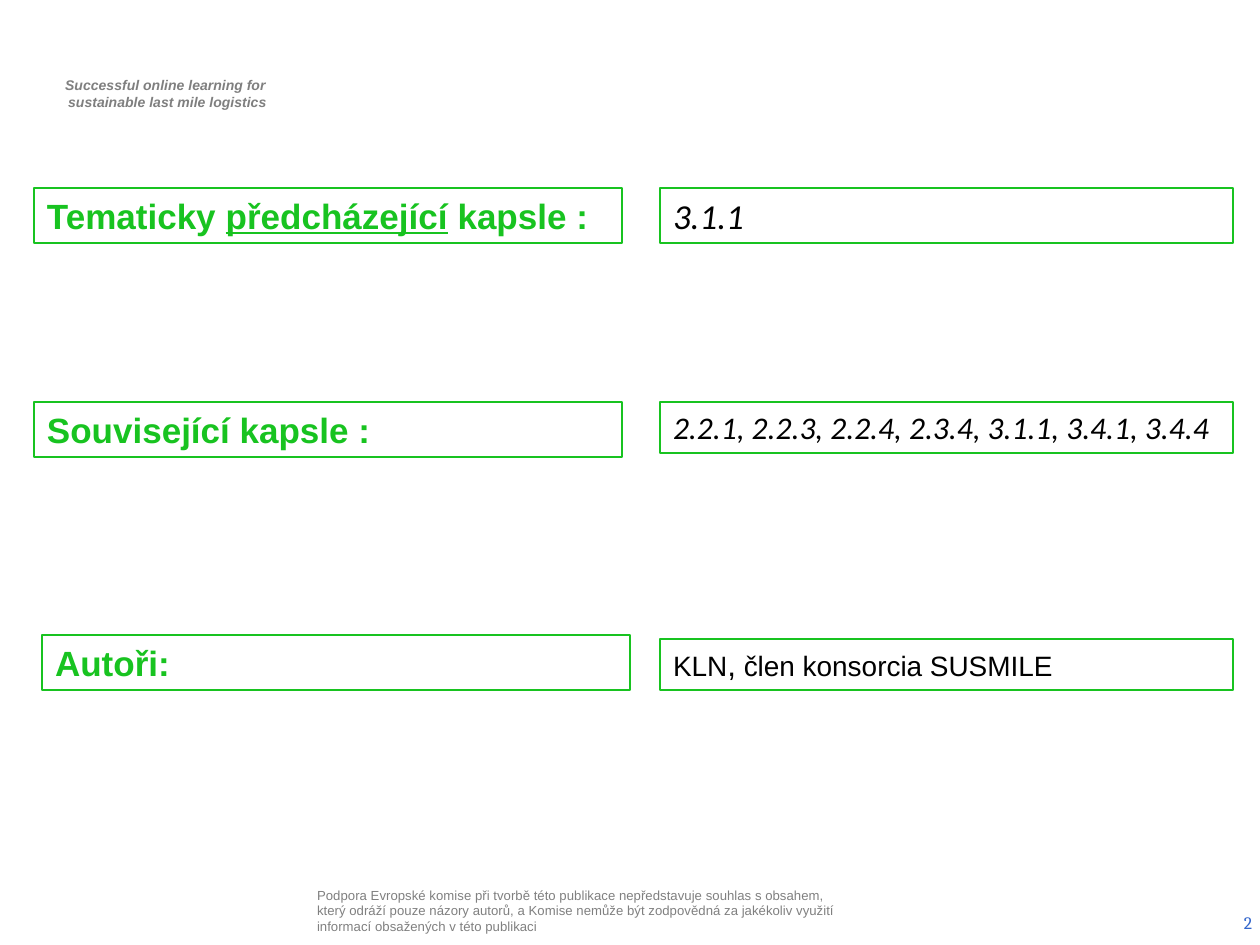
from pptx import Presentation
from pptx.dml.color import RGBColor
from pptx.enum.shapes import MSO_SHAPE
from pptx.enum.text import MSO_ANCHOR, PP_ALIGN
from pptx.util import Emu, Pt

GREEN, GREY = "18C320", "7F7F7F"
INSETS = (13, 6, 13, 6)
LABEL = dict(size=20, color=GREEN, bold=True)
CODES = dict(font="Calibri", italic=True)


def px(n):
    """Turn px into EMU."""
    return Emu(round(n * 914400 / 126))


def rgb(value):
    """Turn a hex string into a colour."""
    return RGBColor.from_string(value)


def add_run(p, text, size, color="000000", font="Arial", bold=False, italic=False, underline=False):
    """Add one formatted run to a paragraph."""
    r = p.add_run()
    r.text = text
    r.font.size, r.font.name = Pt(size), font
    r.font.bold, r.font.italic, r.font.underline = bold, italic, underline
    r.font.color.rgb = rgb(color)


def set_frame(sp, insets=INSETS, anchor=MSO_ANCHOR.TOP):
    """Prepare the text frame of a shape and return it."""
    tf = sp.text_frame
    tf.word_wrap = True
    tf.vertical_anchor = anchor
    tf.margin_left, tf.margin_top, tf.margin_right, tf.margin_bottom = map(px, insets)
    return tf


def add_header(s, x, y, w, h):
    """Place the two centred lines of the project motto."""
    tf = set_frame(s.shapes.add_textbox(px(x), px(y), px(w), px(h)))
    lines = ("Successful online learning for ", "sustainable last mile logistics")
    for i, line in enumerate(lines):
        p = tf.add_paragraph() if i else tf.paragraphs[0]
        p.alignment = PP_ALIGN.CENTER
        p._p.get_or_add_pPr().set("marL", str(px(5)))
        add_run(p, line, 8, GREY, bold=True, italic=True)


def add_disclaimer(s, x, y, w, h):
    """Place the funding disclaimer."""
    tf = set_frame(s.shapes.add_textbox(px(x), px(y), px(w), px(h)), (5, 1, 5, 5))
    add_run(tf.paragraphs[0],
            "Podpora Evropské komise při tvorbě této publikace nepředstavuje souhlas s obsahem, "
            "který odráží pouze názory autorů, a Komise nemůže být zodpovědná za jakékoliv využití "
            "informací obsažených v této publikaci", 7.5, "808080")


def add_page_number(s, x, y, w, h):
    """Place the page number at the right edge."""
    tf = set_frame(s.shapes.add_textbox(px(x), px(y), px(w), px(h)), anchor=MSO_ANCHOR.MIDDLE)
    p = tf.paragraphs[0]
    p.alignment = PP_ALIGN.RIGHT
    add_run(p, "2", 10, "3366CC", font="Cambria")


def add_field(s, x, y, w, h, runs):
    """Place one green-framed field with its runs."""
    sp = s.shapes.add_shape(MSO_SHAPE.RECTANGLE, px(x), px(y), px(w), px(h))
    sp.shadow.inherit = False
    sp.fill.solid()
    sp.fill.fore_color.rgb = rgb("FFFFFF")
    sp.line.color.rgb = rgb(GREEN)
    sp.line.width = Pt(0.75)
    p = set_frame(sp).paragraphs[0]
    p.alignment = PP_ALIGN.LEFT
    for text, style in runs:
        add_run(p, text, **style)


def main():
    """Build the slide and save it."""
    prs = Presentation()
    prs.slide_width, prs.slide_height = px(1260), px(945)
    s = prs.slides.add_slide(prs.slide_layouts[6])
    add_header(s, 37, 71, 256, 47)
    add_disclaimer(s, 312, 886, 538, 63)
    add_page_number(s, 971, 898, 294, 50)

    preceding = [("Tematicky ", LABEL), ("předcházející", dict(LABEL, underline=True)),
                 (" kapsle :", LABEL)]
    related = "2.2.1, 2.2.3, 2.2.4, 2.3.4, 3.1.1, 3.4.1, 3.4.4"
    authors = [("KLN", dict(size=16)), (",", dict(size=18)),
               (" člen konsorcia SUSMILE", dict(size=16))]
    rows = [
        (34, 188, preceding, 188, 55, [("3.1.1", dict(CODES, size=20))]),
        (34, 402, [("Související kapsle :", LABEL)], 402, 51, [(related, dict(CODES, size=18))]),
        (42, 635, [("Autoři:", LABEL)], 639, 51, authors),
    ]
    for label_x, label_y, label, value_y, value_h, value in rows:
        add_field(s, label_x, label_y, 588, 55, label)
        add_field(s, 660, value_y, 573, value_h, value)
    prs.save("out.pptx")


if __name__ == "__main__":
    main()
